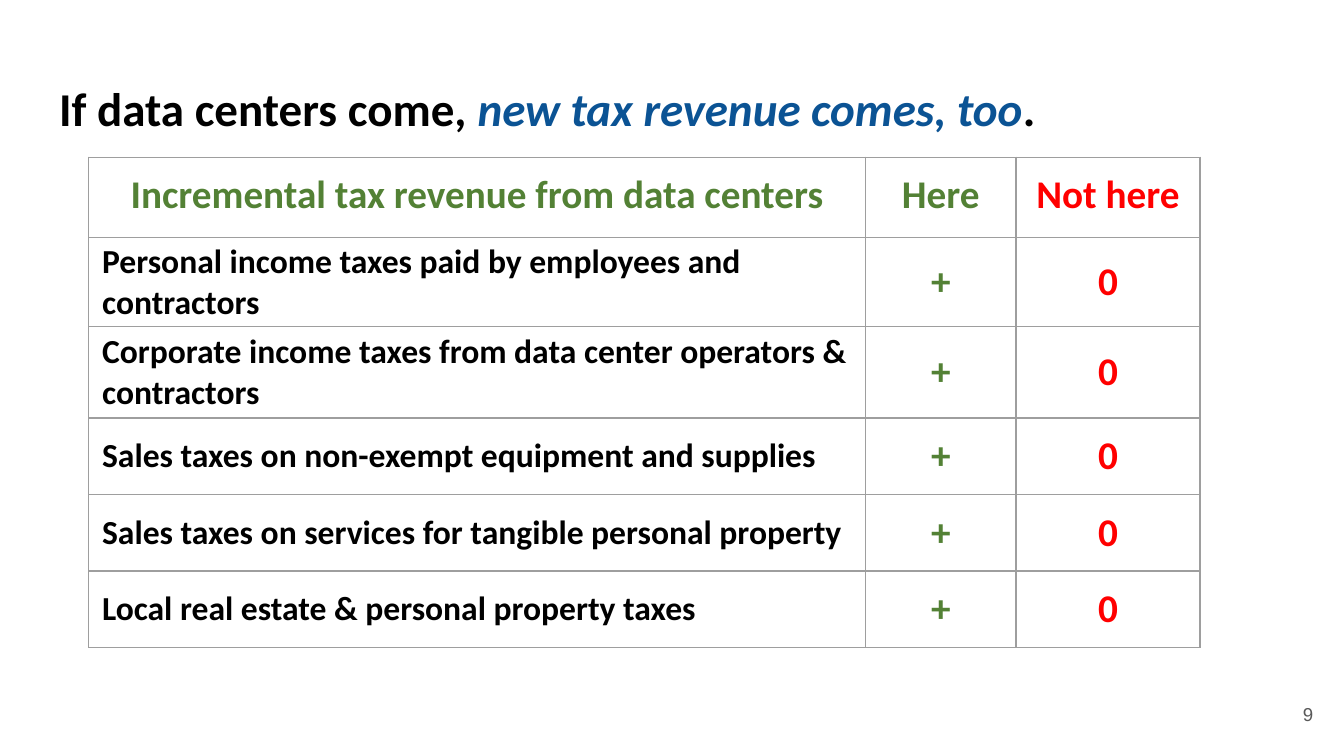
"""Build the slide on new tax revenue from data centers."""
from lxml import etree
from pptx import Presentation
from pptx import util as u
from pptx.dml.color import RGBColor
from pptx.enum import text
from pptx.oxml import ns

COLORS = {
    "ink": "000000",
    "blue": "0B5394",
    "green": "538135",
    "red": "FF0000",
    "border": "9E9E9E",
    "gray": "595959",
}
HEADERS = ["Incremental tax revenue from data centers", "Here", "Not here"]
REVENUES = [
    "Personal income taxes paid by employees and contractors",
    "Corporate income taxes from data center operators & contractors",
    "Sales taxes on non-exempt equipment and supplies",
    "Sales taxes on services for tangible personal property",
    "Local real estate & personal property taxes",
]
COLUMN_WIDTHS = [5.78, 1.12, 1.37]
ROW_HEIGHTS = [0.6, 0.66, 0.68, 0.57, 0.57, 0.57]


def add_span(para, words, size=21, color="ink", font="Calibri", bold=True, italic=False):
    """Append a formatted run to a paragraph."""
    span = para.add_run()
    span.text = words
    span.font.name = font
    span.font.size = u.Pt(size)
    span.font.bold = bold
    span.font.italic = italic
    span.font.color.rgb = RGBColor.from_string(COLORS[color])


def set_borders(cell, color="border", width=0.75):
    """Draw a thin line on all four sides of a cell."""
    properties = cell._tc.get_or_add_tcPr()
    for side in ("lnL", "lnR", "lnT", "lnB"):
        line = etree.SubElement(properties, ns.qn(f"a:{side}"), w=str(u.Pt(width)))
        fill = etree.SubElement(line, ns.qn("a:solidFill"))
        etree.SubElement(fill, ns.qn("a:srgbClr"), val=COLORS[color])


class SlideBuilder:
    """Hold the current slide and its shared style."""

    def __init__(self, deck, inset=0.1):
        """Add a title-only slide to the deck."""
        self.page = deck.slides.add_slide(deck.slide_layouts[5])
        self.inset = u.Inches(inset)

    def frame(self, box, anchor):
        """Set the margins, wrapping and anchor of a box and return its first paragraph."""
        frame = box.text_frame
        frame.margin_left = frame.margin_right = self.inset
        frame.margin_top = frame.margin_bottom = self.inset
        frame.word_wrap = True
        frame.auto_size = text.MSO_AUTO_SIZE.NONE
        frame.vertical_anchor = anchor
        return frame.paragraphs[0]

    def title(self, spans, left, top, width, height):
        """Place the title and fill it with formatted spans."""
        box = self.page.shapes.title
        box.left, box.top = u.Inches(left), u.Inches(top)
        box.width, box.height = u.Inches(width), u.Inches(height)
        para = self.frame(box, text.MSO_ANCHOR.TOP)
        para.alignment = text.PP_ALIGN.LEFT
        for words, style in spans:
            add_span(para, words, size=25.2, **style)

    def cell(self, cell, words, centered, header, **style):
        """Fill and format one table cell."""
        cell.margin_left = cell.margin_right = self.inset
        cell.margin_top = cell.margin_bottom = self.inset if header else 0
        cell.vertical_anchor = text.MSO_ANCHOR.TOP if header else text.MSO_ANCHOR.MIDDLE
        para = cell.text_frame.paragraphs[0]
        para.alignment = text.PP_ALIGN.CENTER if centered else text.PP_ALIGN.LEFT
        add_span(para, words, **style)
        set_borders(cell)
        cell.fill.background()

    def table(self, left, top):
        """Add the table comparing revenue here and not here."""
        table = self.page.shapes.add_table(
            len(ROW_HEIGHTS), len(COLUMN_WIDTHS), u.Inches(left), u.Inches(top),
            u.Inches(sum(COLUMN_WIDTHS)), u.Inches(sum(ROW_HEIGHTS)),
        ).table
        table.first_row = table.horz_banding = False
        for column, width in zip(table.columns, COLUMN_WIDTHS):
            column.width = u.Inches(width)
        for row, height in zip(table.rows, ROW_HEIGHTS):
            row.height = u.Inches(height)
        rows = [HEADERS] + [[revenue, "+", "0"] for revenue in REVENUES]
        for i, row in enumerate(rows):
            for j, words in enumerate(row):
                label = i > 0 and j == 0
                color = "ink" if label else ("green", "green", "red")[j]
                self.cell(table.cell(i, j), words, centered=not label, header=i == 0,
                          size=18 if label else 21, color=color)

    def page_number(self, number, left, top, width, height):
        """Add the page number at the lower right."""
        box = self.page.shapes.add_textbox(
            u.Inches(left), u.Inches(top), u.Inches(width), u.Inches(height))
        para = self.frame(box, text.MSO_ANCHOR.MIDDLE)
        para.alignment = text.PP_ALIGN.RIGHT
        add_span(para, number, size=10, color="gray", font="Arial", bold=False)


def main():
    """Build and save the deck."""
    deck = Presentation()
    deck.slide_width, deck.slide_height = u.Inches(10), u.Inches(10 * 9 / 16)
    builder = SlideBuilder(deck)
    builder.title([
        ("If data centers come, ", {}),
        ("new tax revenue comes, too", {"color": "blue", "italic": True}),
        (".", {}),
    ], 0.34, 0.49, 9.32, 0.63)
    builder.table(0.66, 1.17)
    builder.page_number("9", 9.27, 5.1, 0.6, 0.43)
    deck.save("out.pptx")


if __name__ == "__main__":
    main()
